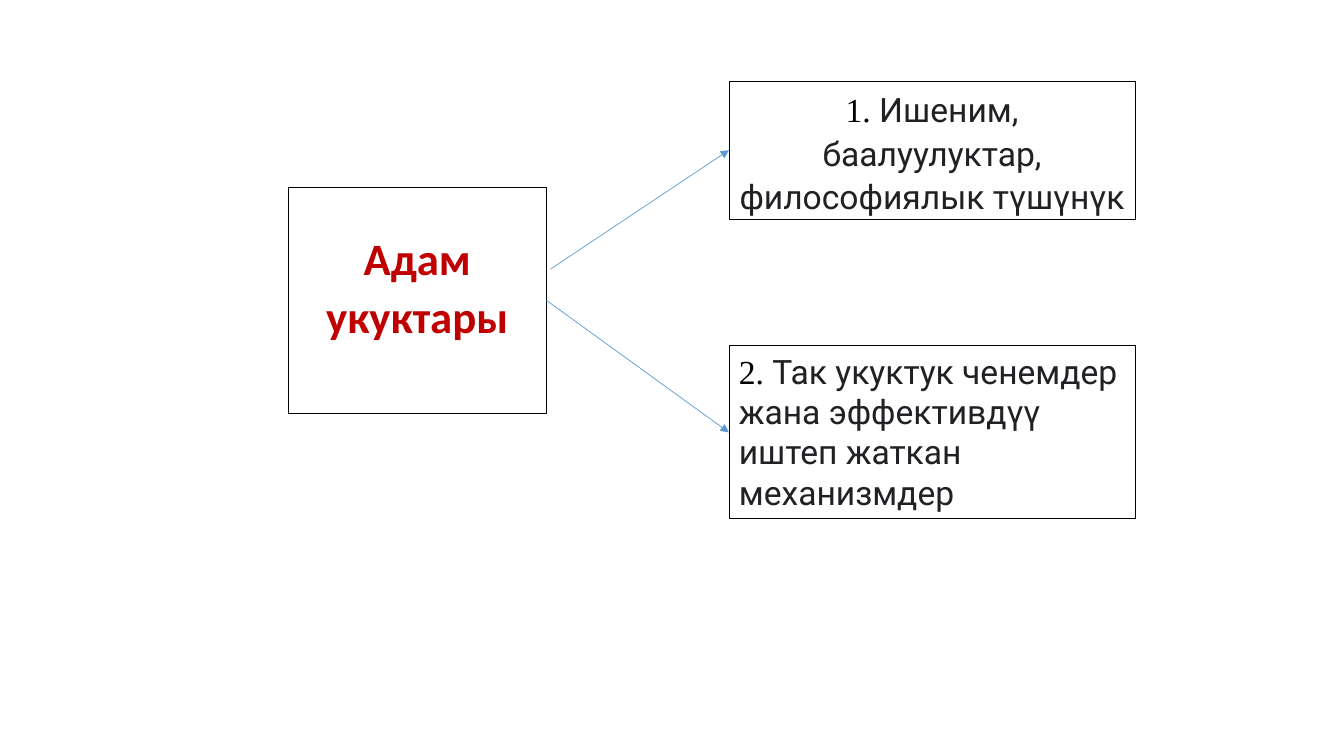
from pptx import Presentation
from pptx.dml.color import RGBColor
from pptx.enum import shapes, text
from pptx.oxml.ns import qn
from pptx.util import Inches, Pt
from lxml import etree


def color(code):
    return RGBColor.from_string(code)


def add_box(place, width, margins, anchor, align, spacing, after, runs):
    """Draw a white framed box holding one paragraph of styled runs."""
    box = slide.shapes.add_shape(
        shapes.MSO_SHAPE.RECTANGLE, *[Inches(n) for n in place])
    box.shadow.inherit = False
    box.fill.solid()
    box.fill.fore_color.rgb = color("FFFFFF")
    box.line.color.rgb = color("000000")
    box.line.width = Pt(width)
    frame = box.text_frame
    frame.word_wrap = True
    frame.vertical_anchor = anchor
    (frame.margin_left, frame.margin_top,
     frame.margin_right, frame.margin_bottom) = [Inches(n) for n in margins]
    para = frame.paragraphs[0]
    para.alignment = align
    para.line_spacing = spacing
    para.space_after = Pt(after)
    for words, font, size, shade, bold in runs:
        run = para.add_run()
        run.text = words
        run.font.name = font
        run.font.size = Pt(size)
        run.font.color.rgb = color(shade)
        run.font.bold = bold


deck = Presentation()
deck.slide_width = Inches(13.33)
deck.slide_height = Inches(7.5)
slide = deck.slides.add_slide(deck.slide_layouts[6])

# Main term; the deep bottom margin lifts the text above the middle
add_box((2.86, 1.86, 2.56, 2.24), 0.75, (0.07, 0.03, 0.07, 0.34),
        text.MSO_ANCHOR.MIDDLE, text.PP_ALIGN.CENTER, 1.07, 8,
        [("Адам укуктары", "Calibri", 32, "C00000", True)])

# Two meanings of the term
meanings = [
    (0.81, 1.37, text.PP_ALIGN.CENTER, 1.07, 8,
     "1. ", "Ишеним, баалуулуктар, философиялык түшүнүк"),
    (3.43, 1.71, text.PP_ALIGN.LEFT, 1.0, 0,
     "2. ", "Так укуктук ченемдер жана эффективдүү иштеп жаткан механизмдер"),
]
for top, height, align, spacing, after, number, words in meanings:
    add_box((7.23, top, 4.03, height), 0.5, (0.1, 0.05, 0.1, 0.05),
            text.MSO_ANCHOR.TOP, align, spacing, after,
            [(number, "Times New Roman", 24, "000000", False),
             (words, "Roboto", 24, "202124", False)])

# Arrows from the term to its meanings
for ends in [(5.46, 2.67, 7.23, 1.49), (5.42, 2.98, 7.23, 4.29)]:
    arrow = slide.shapes.add_connector(
        shapes.MSO_CONNECTOR.STRAIGHT, *[Inches(n) for n in ends])
    arrow.line.color.rgb = color("5B9BD5")
    arrow.line.width = Pt(0.5)
    etree.SubElement(arrow.line._get_or_add_ln(), qn("a:tailEnd"), type="triangle")
    etree.SubElement(arrow._element.spPr, qn("a:effectLst"))

deck.save("out.pptx")
